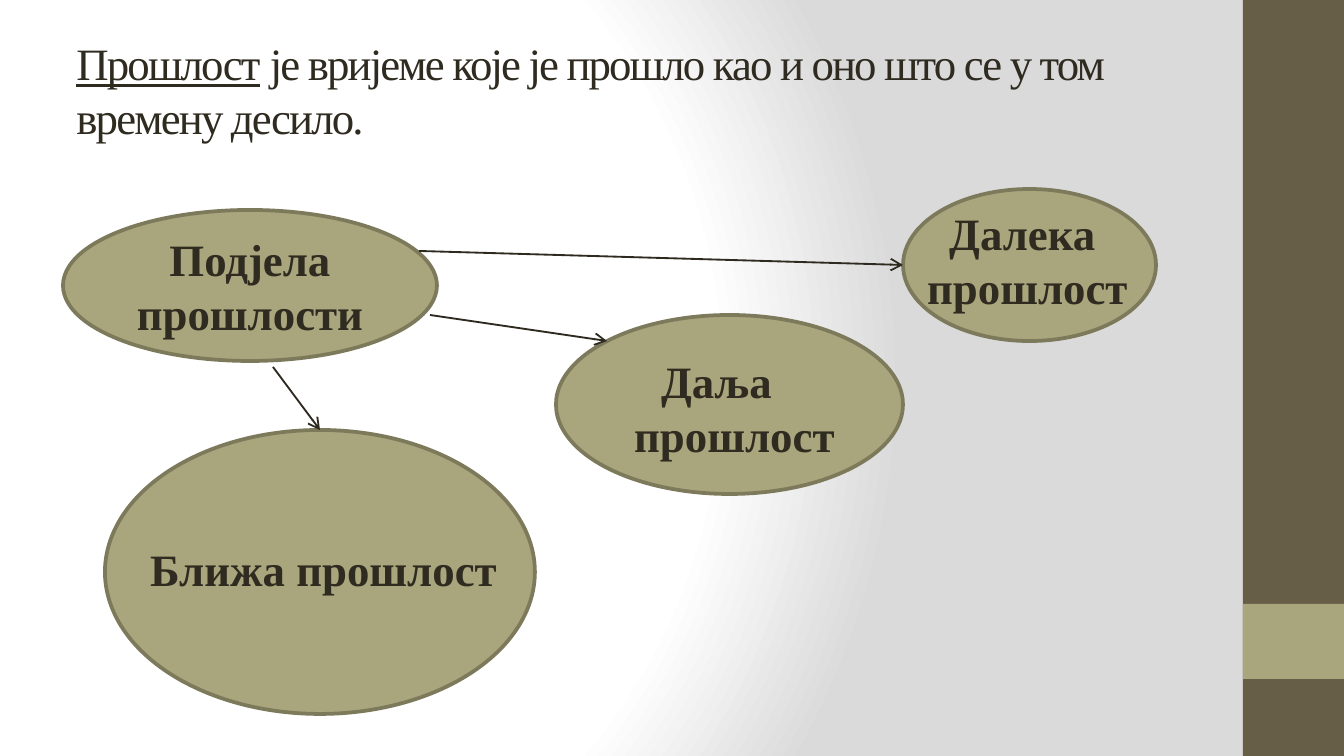
from pptx import Presentation
from pptx.dml.color import RGBColor
from pptx.enum.shapes import MSO_CONNECTOR, MSO_SHAPE
from pptx.enum.text import MSO_ANCHOR, PP_ALIGN
from pptx.oxml import parse_xml
from pptx.oxml.ns import nsdecls, qn
from pptx.util import Pt
from lxml.etree import SubElement

PX = 914400 / 134.4
WIDTH, HEIGHT = 1344, 756
FONT = "Times New Roman"
INK, LINE = "2F2B20", "2E2A1F"
BROWN, OLIVE, RIM = "675E47", "A9A57C", "7D7A5C"


def px(n):
    return round(n * PX)


def color(hex_code):
    return RGBColor.from_string(hex_code)


def add_text(p, text, size=24, bold=False, underline=False, spacing=0):
    r = p.add_run()
    r.text = text
    r.font.name = FONT
    r.font.size = Pt(size)
    r.font.bold = bold
    r.font.underline = underline
    r.font.color.rgb = color(INK)
    if spacing:
        r._r.get_or_add_rPr().set("spc", str(spacing * 100))
    return r


def add_figure(s, kind, box, fill, rim=None):
    sp = s.shapes.add_shape(kind, *map(px, box))
    sp.shadow.inherit = False
    sp.fill.solid()
    sp.fill.fore_color.rgb = color(fill)
    if rim:
        sp.line.color.rgb = color(rim)
        sp.line.width = Pt(2)
    else:
        sp.line.fill.background()
    return sp


def add_background(s):
    s.background.fill.solid()
    bg = s.element.find(".//" + qn("p:bgPr"))
    stops = "".join(
        f'<a:gs pos="{pos * 1000}"><a:srgbClr val="{c}"/></a:gs>'
        for pos, c in ((0, "FFFFFF"), (75, "FFFFFF"), (100, "DADADA")))
    bg.replace(bg[0], parse_xml(
        f'<a:gradFill {nsdecls("a")} rotWithShape="1"><a:gsLst>{stops}</a:gsLst>'
        '<a:path path="circle"><a:fillToRect l="20000" t="50000" r="100000" b="50000"/>'
        '</a:path></a:gradFill>'))


def add_side_band(s, box):
    x, y, w, h = box
    add_figure(s, MSO_SHAPE.RECTANGLE, box, BROWN)
    add_figure(s, MSO_SHAPE.RECTANGLE, (x, y + h * 4 // 5, w, h // 10), OLIVE)


def add_title(s, box):
    title = s.shapes.title
    title.left, title.top, title.width, title.height = map(px, box)
    tf = title.text_frame
    tf.word_wrap = True
    tf.vertical_anchor = MSO_ANCHOR.MIDDLE
    p = tf.paragraphs[0]
    p.alignment = PP_ALIGN.LEFT
    add_text(p, "Прошлост", underline=True, spacing=-1)
    add_text(p, " је вријеме које је прошло као и оно што се у том времену десило.",
             spacing=-1)


def add_topic(s, box, text):
    sp = add_figure(s, MSO_SHAPE.OVAL, box, OLIVE, RIM)
    tf = sp.text_frame
    tf.word_wrap = True
    tf.vertical_anchor = MSO_ANCHOR.MIDDLE
    p = tf.paragraphs[0]
    p.alignment = PP_ALIGN.CENTER
    add_text(p, text, bold=True)


def add_branch(s, box, label, lines):
    """Oval with a label placed relative to it; lines are (text, indent)."""
    x, y, w, h = box
    dx, dy, label_w, label_h = label
    add_figure(s, MSO_SHAPE.OVAL, box, OLIVE, RIM)
    tb = s.shapes.add_textbox(px(x + dx), px(y + dy), px(label_w), px(label_h))
    tf = tb.text_frame
    tf.word_wrap = True
    for i, (text, indent) in enumerate(lines):
        p = tf.add_paragraph() if i else tf.paragraphs[0]
        p._p.get_or_add_pPr().set("marL", str(px(indent)))
        add_text(p, text, bold=True)


def add_arrow(s, start, end):
    c = s.shapes.add_connector(MSO_CONNECTOR.STRAIGHT, *map(px, start + end))
    c.line.color.rgb = color(LINE)
    c.line.width = Pt(1)
    SubElement(c.line._get_or_add_ln(), qn("a:tailEnd"), type="arrow")
    SubElement(c._element.spPr, qn("a:effectLst"))


def main():
    prs = Presentation()
    prs.slide_width, prs.slide_height = px(WIDTH), px(HEIGHT)
    s = prs.slides.add_slide(prs.slide_layouts[5])

    add_background(s)
    add_side_band(s, (1243, 0, 101, HEIGHT))
    add_title(s, (63, 0, 1120, 179))

    # Topic and its three branches
    add_topic(s, (63, 210, 374, 151), "Подјела прошлости")
    add_branch(s, (105, 430, 430, 284), (32, 105, 388, 67),
               [("Ближа прошлост", 0)])
    add_branch(s, (556, 315, 347, 179), (53, 32, 388, 122),
               [("Даља", 39), ("прошлост", 12)])
    add_branch(s, (903, 189, 253, 152), (11, 10, 325, 122),
               [("Далека", 22), ("прошлост", 0)])

    # Arrows from the topic to the branches
    for start, end in (((273, 367), (320, 430)),
                       ((430, 315), (607, 341)),
                       ((419, 251), (903, 265))):
        add_arrow(s, start, end)

    prs.save("out.pptx")


if __name__ == "__main__":
    main()
